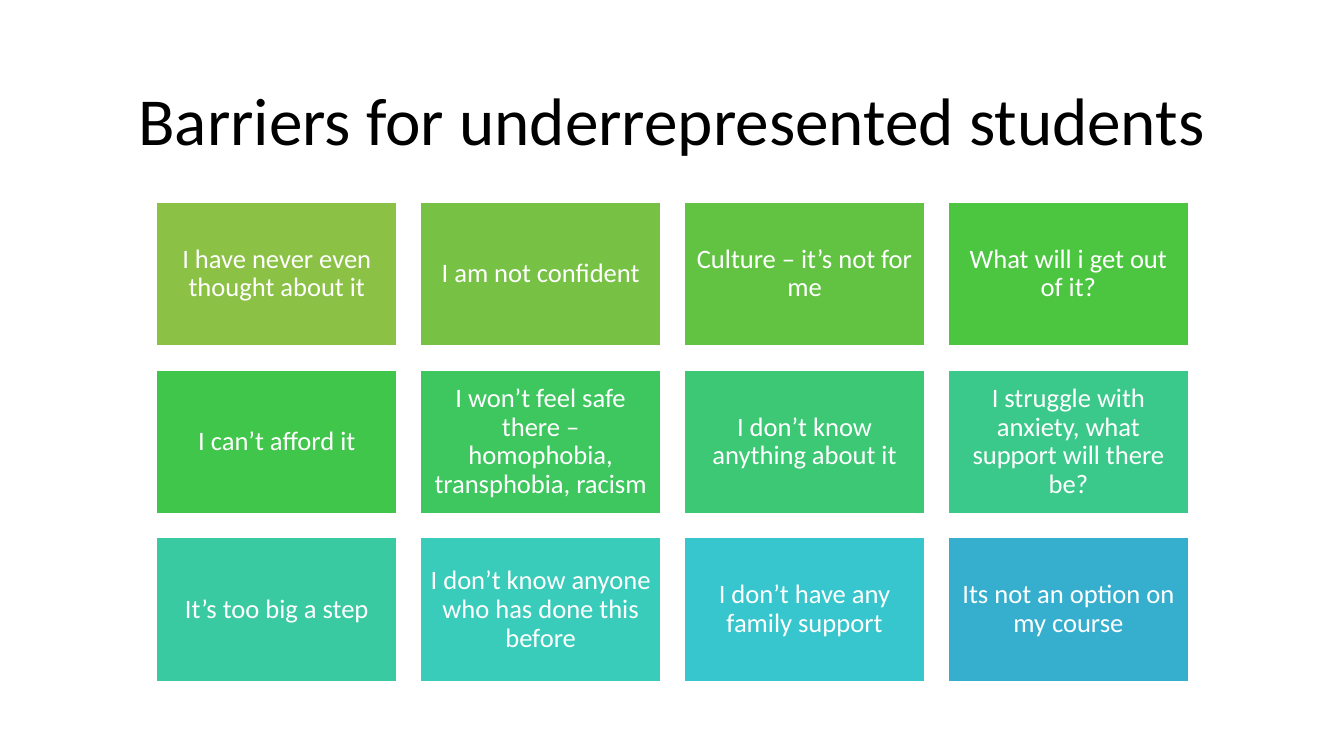
from dataclasses import dataclass

from pptx import Presentation
from pptx import util as u
from pptx.dml.color import RGBColor
from pptx.enum import shapes, text


@dataclass(frozen=True)
class Theme:
    font: str = "Calibri"
    title_size: int = 48
    tile_size: int = 19
    title_color: str = "000000"
    light: str = "FFFFFF"
    line_width: int = 1
    line_spacing: float = 0.9


THEME = Theme()
TITLE = "Barriers for underrepresented students"
COLUMNS = 4
BARRIERS = [
    ("I have never even thought about it", "8BC145"),
    ("I am not confident", "77C244"),
    ("Culture – it’s not for me", "62C342"),
    ("What will i get out of it?", "4CC541"),
    ("I can’t afford it", "40C64A"),
    ("I won’t feel safe there – homophobia, transphobia, racism", "3EC75F"),
    ("I don’t know anything about it", "3DC875"),
    ("I struggle with anxiety, what support will there be?", "3BC98B"),
    ("It’s too big a step", "3ACAA2"),
    ("I don’t know anyone who has done this before", "39CCBA"),
    ("I don’t have any family support", "37C6CD"),
    ("Its not an option on my course", "36AFCE"),
]


def set_format(target, values):
    for name, value in values.items():
        setattr(target, name, value)


def write_centred(frame, wording, size, color, inset):
    """Fill a text frame with one paragraph, centred both ways."""
    frame.text = wording
    margins = ("margin_left", "margin_right", "margin_top", "margin_bottom")
    set_format(frame, {
        "word_wrap": True,
        "vertical_anchor": text.MSO_ANCHOR.MIDDLE,
        **{margin: u.Cm(inset) for margin in margins},
    })
    paragraph = frame.paragraphs[0]
    set_format(paragraph, {
        "alignment": text.PP_ALIGN.CENTER,
        "line_spacing": THEME.line_spacing,
    })
    font = paragraph.runs[0].font
    set_format(font, {"name": THEME.font, "size": u.Pt(size)})
    font.color.rgb = RGBColor.from_string(color)


def add_title(slide, box):
    heading = slide.shapes.add_textbox(*map(u.Cm, box))
    write_centred(heading.text_frame, TITLE, THEME.title_size,
                  THEME.title_color, inset=0.2)


def add_tile(slide, box, wording, color):
    tile = slide.shapes.add_shape(shapes.MSO_SHAPE.RECTANGLE, *map(u.Cm, box))
    tile.shadow.inherit = False
    tile.fill.solid()
    tile.fill.fore_color.rgb = RGBColor.from_string(color)
    tile.line.color.rgb = RGBColor.from_string(THEME.light)
    tile.line.width = u.Pt(THEME.line_width)
    write_centred(tile.text_frame, wording, THEME.tile_size, THEME.light,
                  inset=0.2)


def add_barrier_grid(slide, box, gap):
    """Divide the box into equal tiles, filled row by row."""
    left, top, width, height = box
    rows = len(BARRIERS) // COLUMNS
    tile_width = (width - gap * (COLUMNS - 1)) / COLUMNS
    tile_height = (height - gap * (rows - 1)) / rows
    for index, (wording, color) in enumerate(BARRIERS):
        row, column = divmod(index, COLUMNS)
        tile_box = (left + column * (tile_width + gap),
                    top + row * (tile_height + gap),
                    tile_width, tile_height)
        add_tile(slide, tile_box, wording, color)


def main():
    deck = Presentation()
    set_format(deck, {"slide_width": u.Cm(33.87), "slide_height": u.Cm(19.05)})
    slide = deck.slides.add_slide(deck.slide_layouts[6])
    add_title(slide, (2.33, 1.55, 29.21, 3.15))
    add_barrier_grid(slide, (3.95, 5.09, 26, 12.09), gap=0.6)
    deck.save("out.pptx")


if __name__ == "__main__":
    main()
